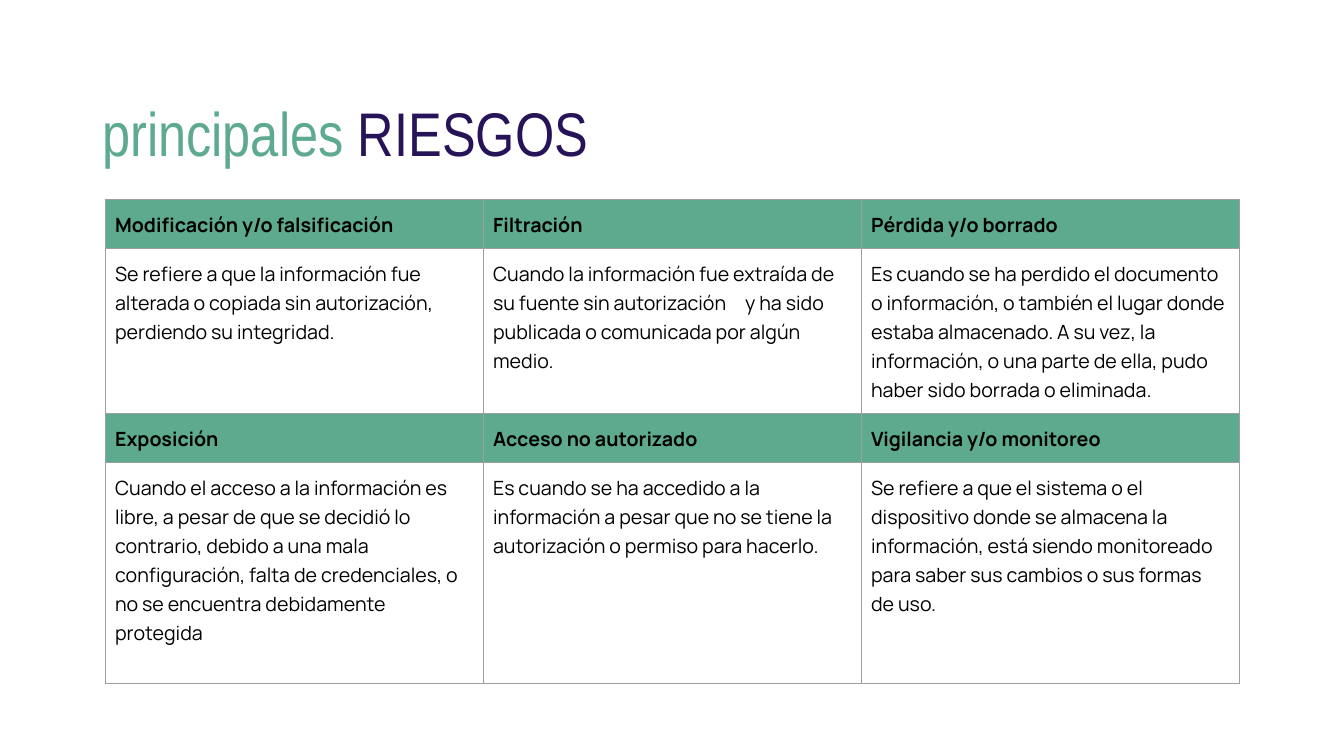
from dataclasses import dataclass

from lxml.etree import SubElement
from pptx import Presentation
from pptx.dml.color import RGBColor
from pptx.enum.text import MSO_ANCHOR
from pptx.oxml.ns import qn
from pptx.slide import Slide
from pptx.table import _Cell
from pptx.text.text import _Paragraph
from pptx.util import Emu, Inches, Pt


@dataclass(frozen=True)
class Theme:
    green: str = "5EAA8F"
    navy: str = "271357"
    black: str = "000000"
    gray: str = "9E9E9E"
    head_font: str = "Arial Narrow"
    text_font: str = "Manrope"
    head_size: float = 44
    text_size: float = 14
    rule: float = 0.75


@dataclass(frozen=True)
class Risk:
    name: str
    text: str
    after: float = 0


@dataclass(frozen=True)
class Area:
    col: float
    row: float
    wide: float
    high: float


THEME = Theme()
COLS, ROWS = 128, 72
WIDTH, HEIGHT = Inches(40 / 3), Inches(7.5)
TITLE = Area(8.8, 6, 110.4, 13.92)
TABLE = Area(10, 19, 108, 46.07)
BANDS = (4.68, 15.66, 4.68, 21.05)
RISKS = (
    (
        Risk("Modificación y/o falsificación",
             "Se refiere a que la información fue alterada o copiada sin "
             "autorización, perdiendo su integridad.", 12),
        Risk("Filtración",
             "Cuando la información fue extraída de su fuente sin autorización "
             "\ty ha sido publicada o comunicada por algún medio."),
        Risk("Pérdida y/o borrado",
             "Es cuando se ha perdido el documento o información, o también el "
             "lugar donde estaba almacenado. A su vez, la información, o una "
             "parte de ella, pudo haber sido borrada o eliminada."),
    ),
    (
        Risk("Exposición",
             "Cuando el acceso a la información es libre, a pesar de que se "
             "decidió lo contrario, debido a una mala configuración, falta de "
             "credenciales, o no se encuentra debidamente protegida"),
        Risk("Acceso no autorizado",
             "Es cuando se ha accedido a la información a pesar que no se "
             "tiene la autorización o permiso para hacerlo."),
        Risk("Vigilancia y/o monitoreo",
             "Se refiere a que el sistema o el dispositivo donde se almacena "
             "la información, está siendo monitoreado para saber sus cambios "
             "o sus formas de uso."),
    ),
)


def across(cols: float) -> Emu:
    return Emu(round(WIDTH * cols / COLS))


def down(rows: float) -> Emu:
    return Emu(round(HEIGHT * rows / ROWS))


def place(area: Area) -> tuple[Emu, Emu, Emu, Emu]:
    return across(area.col), down(area.row), across(area.wide), down(area.high)


def add_run(para: _Paragraph, text: str, face: str, size: float,
            color: str, bold: bool = False) -> None:
    run = para.add_run()
    run.text = text
    run.font.name = face
    run.font.size = Pt(size)
    run.font.bold = bold
    run.font.color.rgb = RGBColor.from_string(color)


def add_title(slide: Slide) -> None:
    frame = slide.shapes.add_textbox(*place(TITLE)).text_frame
    frame.word_wrap = True
    frame.vertical_anchor = MSO_ANCHOR.MIDDLE
    para = frame.paragraphs[0]
    para.line_spacing = 0.9
    for text, color in (("principales ", THEME.green), ("RIESGOS", THEME.navy)):
        add_run(para, text, THEME.head_font, THEME.head_size, color)


def add_rules(cell: _Cell) -> None:
    props = cell._tc.get_or_add_tcPr()
    for side in ("a:lnL", "a:lnR", "a:lnT", "a:lnB"):
        line = SubElement(props, qn(side), w=str(Pt(THEME.rule)))
        fill = SubElement(line, qn("a:solidFill"))
        SubElement(fill, qn("a:srgbClr"), val=THEME.gray)


def fill_cell(cell: _Cell, text: str, head: bool, after: float = 0) -> None:
    add_rules(cell)
    if head:
        cell.fill.solid()
        cell.fill.fore_color.rgb = RGBColor.from_string(THEME.green)
    else:
        cell.fill.background()
    cell.margin_left = cell.margin_right = Inches(0.1)
    cell.margin_top = cell.margin_bottom = Inches(0.1)
    para = cell.text_frame.paragraphs[0]
    para.line_spacing = 1.08
    para.space_after = Pt(after)
    add_run(para, text, THEME.text_font, THEME.text_size, THEME.black, head)


def add_risks(slide: Slide) -> None:
    count = len(RISKS[0])
    table = slide.shapes.add_table(len(BANDS), count, *place(TABLE)).table
    table.first_row = table.horz_banding = False
    for col in table.columns:
        col.width = across(TABLE.wide / count)
    for row, high in zip(table.rows, BANDS):
        row.height = down(high)
    for band, risks in enumerate(RISKS):
        for col, risk in enumerate(risks):
            fill_cell(table.cell(2 * band, col), risk.name, True)
            fill_cell(table.cell(2 * band + 1, col), risk.text, False, risk.after)


def main() -> None:
    deck = Presentation()
    deck.slide_width, deck.slide_height = WIDTH, HEIGHT
    slide = deck.slides.add_slide(deck.slide_layouts[6])
    add_title(slide)
    add_risks(slide)
    deck.save("out.pptx")


if __name__ == "__main__":
    main()
